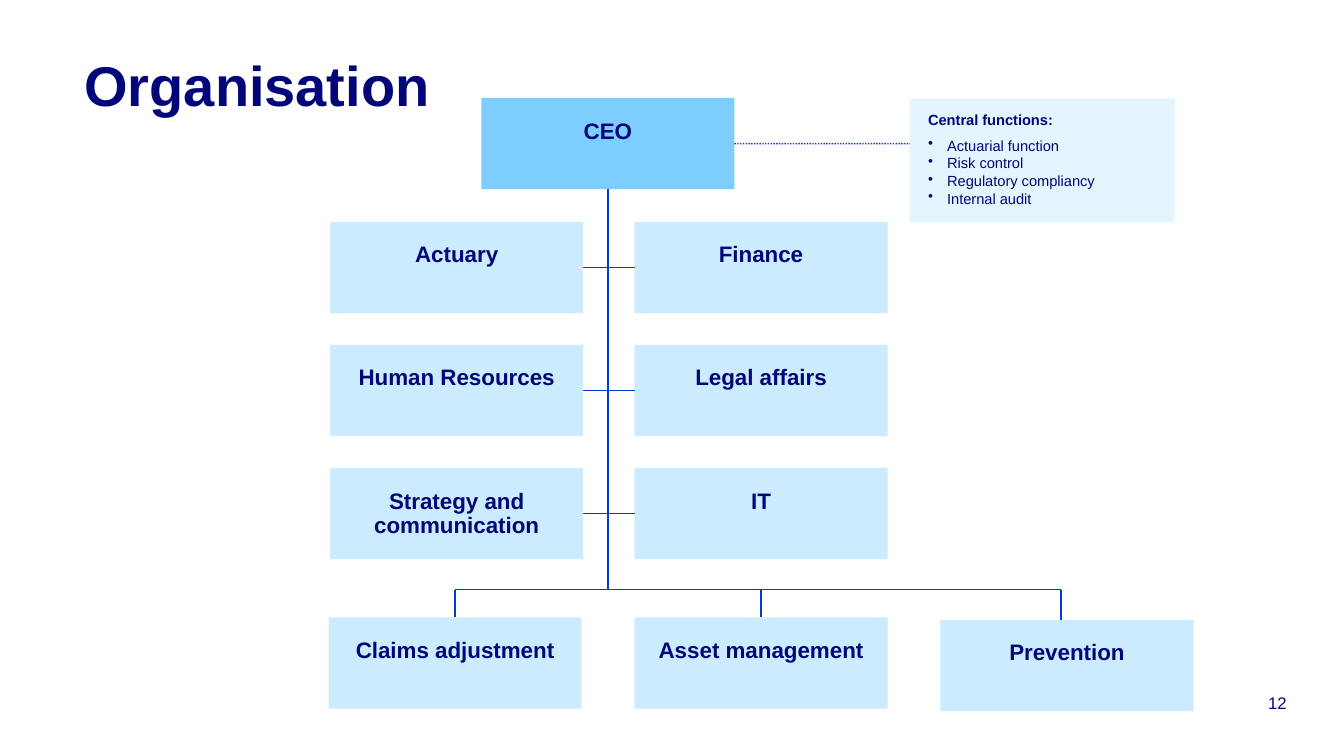
from dataclasses import dataclass

from lxml.etree import SubElement as Sub
from pptx import Presentation
from pptx.dml.color import RGBColor as Rgb
from pptx.enum.dml import MSO_LINE as Dash
from pptx.enum.shapes import MSO_CONNECTOR as Link, MSO_SHAPE as Form
from pptx.enum.text import MSO_ANCHOR as Anchor, PP_ALIGN as Align
from pptx.oxml.ns import qn
from pptx.util import Cm, Pt


@dataclass(frozen=True)
class Theme:
    face: str = "Arial"
    ink: str = "020678"
    line: str = "003CD2"
    top: str = "7DCDFF"
    unit: str = "CBEBFF"
    note: str = "E5F5FF"
    head: float = 40
    label: float = 16
    page: float = 12
    small: float = 10.5
    lead: float = 12.65


look = Theme()
WIDE, HIGH = 6.38, 2.3
TOP, LEFT, RIGHT = 2.47, 8.32, 15.99
ROW, STEP = 5.59, 3.1
BUS = 14.86


def write(para, text, size, bold=False, align=Align.LEFT):
    para.alignment = align
    run = para.add_run()
    run.text = text
    font = run.font
    font.name, font.size, font.bold = look.face, Pt(size), bold
    font.color.rgb = Rgb.from_string(look.ink)


def inset(frame, side=0, top=0):
    frame.word_wrap = True
    frame.margin_left = frame.margin_right = Cm(side)
    frame.margin_top, frame.margin_bottom = Cm(top), 0


def label(slide, box, text, size, bold=False, align=Align.LEFT, anchor=Anchor.TOP):
    frame = slide.shapes.add_textbox(*map(Cm, box)).text_frame
    inset(frame)
    frame.vertical_anchor = anchor
    write(frame.paragraphs[0], text, size, bold, align)


def panel(slide, box, fill, side, top):
    shape = slide.shapes.add_shape(Form.RECTANGLE, *map(Cm, box))
    shape.shadow.inherit = False
    shape.fill.solid()
    shape.fill.fore_color.rgb = Rgb.from_string(fill)
    shape.line.fill.background()
    inset(shape.text_frame, side, top)
    shape.text_frame.vertical_anchor = Anchor.TOP
    return shape


def card(slide, left, top, text, fill=look.unit):
    shape = panel(slide, (left, top, WIDE, HIGH), fill, 0, 0.55)
    para = shape.text_frame.paragraphs[0]
    para.line_spacing = 0.9
    write(para, text, look.label, True, Align.CENTER)
    return shape


def wire(slide, start, end, tail=None, tip=None, dash=None):
    line = slide.shapes.add_connector(Link.STRAIGHT, *map(Cm, start + end))
    line.line.color.rgb = Rgb.from_string(look.line)
    line.line.width = Pt(1)
    if dash:
        line.line.dash_style = dash
    Sub(line._element.spPr, qn("a:effectLst"))
    if tail:
        line.begin_connect(*tail)
    if tip:
        line.end_connect(*tip)


def note(slide, box, title, items):
    frame = panel(slide, box, look.note, 0.46, 0.3).text_frame
    head = frame.paragraphs[0]
    head.line_spacing = Pt(look.lead)
    write(head, title, look.small, True)
    for rank, item in enumerate(items):
        para = frame.add_paragraph()
        props = para._p.get_or_add_pPr()
        props.set("marL", str(Cm(0.48)))
        props.set("indent", str(Cm(-0.48)))
        Sub(props, qn("a:buChar"), char="•")
        para.line_spacing = Pt(look.lead)
        para.space_before = Pt(0 if rank else 6)
        write(para, item, look.small)


def staff(slide, pairs):
    for rank, (west, east) in enumerate(pairs):
        top = ROW + rank * STEP
        mid = top + HIGH / 2
        one = card(slide, LEFT, top, west)
        two = card(slide, RIGHT, top, east)
        wire(slide, (LEFT + WIDE, mid), (RIGHT, mid), (one, 3), (two, 1))


def line_units(slide, units):
    for left, top, drop, text in units:
        shape = card(slide, left, top, text)
        mid = left + WIDE / 2
        tip = (shape, 0) if abs(mid - drop) < 0.01 else None
        wire(slide, (drop, BUS), (drop, top), tip=tip)
    wire(slide, (units[0][2], BUS), (units[-1][2], BUS))


def lead(slide, left):
    boss = card(slide, left, TOP, "CEO", look.top)
    mid, side = left + WIDE / 2, TOP + HIGH / 2
    wire(slide, (mid, TOP + HIGH), (mid, BUS), (boss, 2))
    wire(slide, (left + WIDE, side), (23.11, side), (boss, 3), dash=Dash.ROUND_DOT)


def main():
    deck = Presentation()
    deck.slide_width, deck.slide_height = Cm(33.87), Cm(19.05)
    slide = deck.slides.add_slide(deck.slide_layouts[6])
    label(slide, (2.13, 1.27, 9.45, 1.64), "Organisation", look.head, True)
    label(slide, (30.53, 17.45, 1.9, 0.51), "12", look.page,
          align=Align.RIGHT, anchor=Anchor.BOTTOM)
    lead(slide, 12.13)
    note(slide, (22.93, 2.48, 6.68, 3.12), "Central functions:",
         ("Actuarial function", "Risk control", "Regulatory compliancy", "Internal audit"))
    staff(slide, (("Actuary", "Finance"),
                  ("Human Resources", "Legal affairs"),
                  ("Strategy and communication", "IT")))
    line_units(slide, ((8.28, 15.56, 11.47, "Claims adjustment"),
                       (15.99, 15.56, 19.18, "Asset management"),
                       (23.7, 15.62, 26.74, "Prevention")))
    deck.save("out.pptx")


if __name__ == "__main__":
    main()
